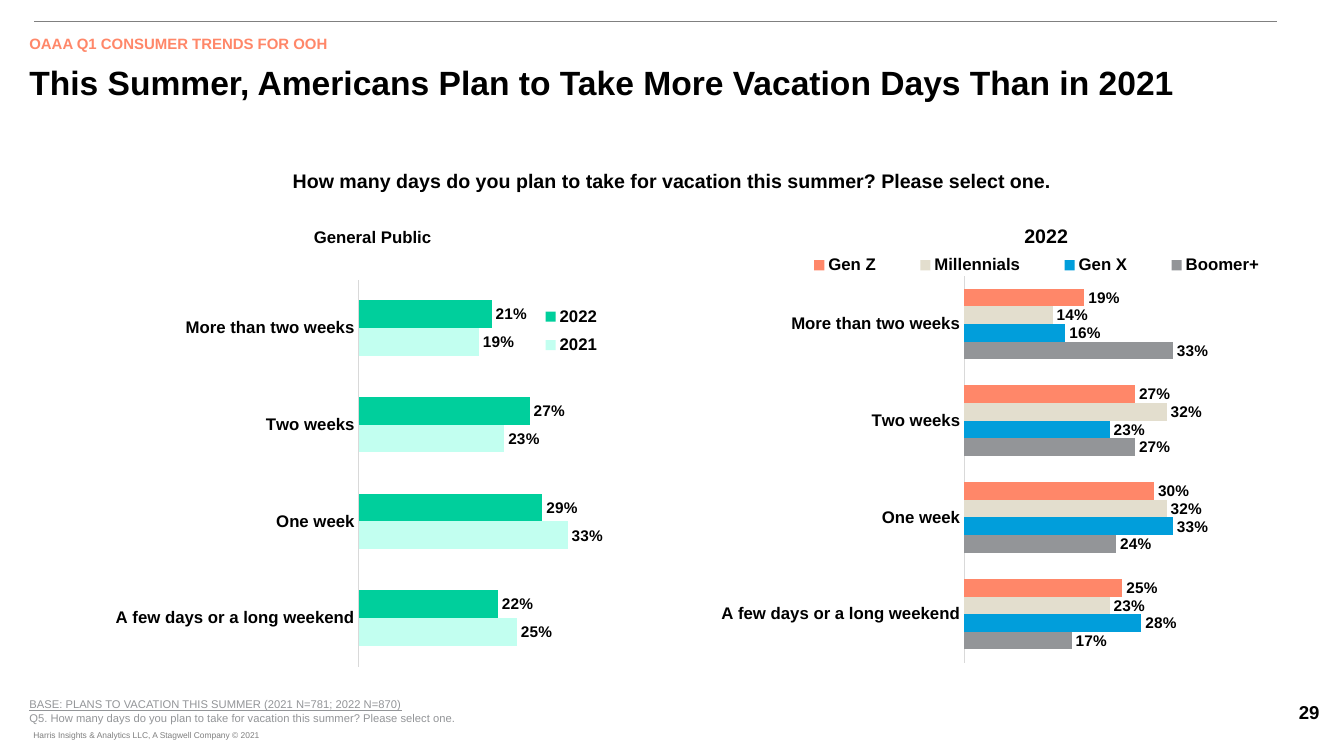
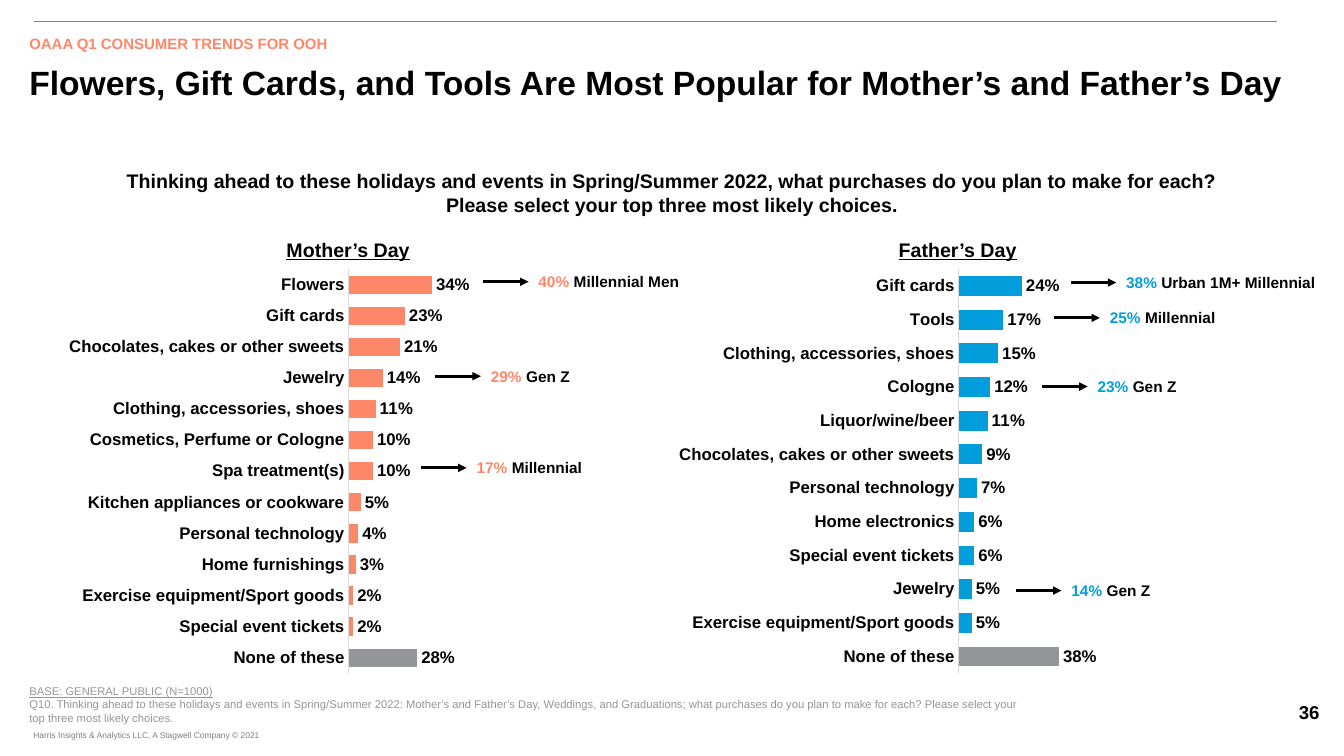
from lxml import etree
from pptx import Presentation
from pptx.chart.data import CategoryChartData
from pptx.dml.color import RGBColor
from pptx.enum.chart import XL_CHART_TYPE, XL_LABEL_POSITION, XL_LEGEND_POSITION, XL_TICK_MARK
from pptx.enum.shapes import MSO_CONNECTOR
from pptx.enum.text import PP_ALIGN
from pptx.oxml.ns import qn
from pptx.util import Cm, Pt

BAR = XL_CHART_TYPE.BAR_CLUSTERED
OUTSIDE_END = XL_LABEL_POSITION.OUTSIDE_END
LEGEND_RIGHT, LEGEND_TOP = XL_LEGEND_POSITION.RIGHT, XL_LEGEND_POSITION.TOP
NO_TICK = XL_TICK_MARK.NONE
STRAIGHT = MSO_CONNECTOR.STRAIGHT
LEFT, CENTER = PP_ALIGN.LEFT, PP_ALIGN.CENTER

FONT = "Arial"
BLACK = RGBColor(0x00, 0x00, 0x00)
CORAL = RGBColor(0xFF, 0x87, 0x69)
BLUE = RGBColor(0x01, 0x9E, 0xDB)
SAND = RGBColor(0xE3, 0xDE, 0xCE)
GREEN = RGBColor(0x00, 0xCF, 0x9C)
MINT = RGBColor(0xC2, 0xFF, 0xF0)
GRAY = RGBColor(0x93, 0x95, 0x98)
COPYRIGHT_GRAY = RGBColor(0x7F, 0x7F, 0x7F)
RULE_GRAY = RGBColor(0x80, 0x80, 0x80)
AXIS_GRAY = RGBColor(0xD9, 0xD9, 0xD9)

KICKER = {"size": Pt(10.7), "bold": True}
TITLE = {"size": Pt(24), "bold": True}
QUESTION = {"size": Pt(14), "bold": True}
SMALL_HEADING = {"size": Pt(12), "bold": True}
DAY_HEADING = {"size": Pt(14), "bold": True, "underline": True}
PAGE_NUMBER = {"size": Pt(13.3), "bold": True}
COPYRIGHT = {"size": Pt(6)}
NOTE = {"size": Pt(8)}
NOTE_BASE = {"size": Pt(8), "underline": True}
CALLOUT = {"size": Pt(11), "bold": True}

ARROW_LENGTH = 1.15
VACATION_LENGTHS = ["A few days or a long weekend", "One week", "Two weeks", "More than two weeks"]

MOTHER_GIFTS = {
    "Flowers": 0.34, "Gift cards": 0.23, "Chocolates, cakes or other sweets": 0.21,
    "Jewelry": 0.14, "Clothing, accessories, shoes": 0.11,
    "Cosmetics, Perfume or Cologne": 0.10, "Spa treatment(s)": 0.10,
    "Kitchen appliances or cookware": 0.05, "Personal technology": 0.04,
    "Home furnishings": 0.03, "Exercise equipment/Sport goods": 0.02,
    "Special event tickets": 0.02, "None of these": 0.28,
}
FATHER_GIFTS = {
    "Gift cards": 0.24, "Tools": 0.17, "Clothing, accessories, shoes": 0.15,
    "Cologne": 0.12, "Liquor/wine/beer": 0.11, "Chocolates, cakes or other sweets": 0.09,
    "Personal technology": 0.07, "Home electronics": 0.06, "Special event tickets": 0.06,
    "Jewelry": 0.05, "Exercise equipment/Sport goods": 0.05, "None of these": 0.38,
}


def style_font(font, formats, color=BLACK):
    for name, value in {"name": FONT, **formats}.items():
        setattr(font, name, value)
    font.color.rgb = color


def add_text(s, box, paragraphs, align=LEFT, wrap=True):
    """Each paragraph is a list of (text, formats, color) runs."""
    sp = s.shapes.add_textbox(*map(Cm, box))
    tf = sp.text_frame
    tf.word_wrap = wrap
    for i, runs in enumerate(paragraphs):
        p = tf.paragraphs[0] if i == 0 else tf.add_paragraph()
        p.alignment = align
        for text, formats, color in runs:
            r = p.add_run()
            r.text = text
            style_font(r.font, formats, color)
    return sp


def add_line(s, x1, x2, y, color, width, arrow=False):
    line = s.shapes.add_connector(STRAIGHT, *map(Cm, (x1, y, x2, y)))
    line.line.color.rgb = color
    line.line.width = Pt(width)
    if arrow:
        etree.SubElement(line.line._get_or_add_ln(), qn("a:tailEnd"), type="triangle")
    etree.SubElement(line._element.spPr, qn("a:effectLst"))


def add_frame(prs, title, question, number, note_top, note_base, note):
    """Add a slide with the heading, question and footer that all slides share."""
    s = prs.slides.add_slide(prs.slide_layouts[6])
    add_line(s, 0.86, 32.18, 0.55, RULE_GRAY, 0.5)
    add_text(s, (0.49, 0.74, 16.94, 0.71), [[("OAAA Q1 CONSUMER TRENDS FOR OOH", KICKER, CORAL)]])
    add_text(s, (0.49, 1.43, 33.27, 0.99), [[(title, TITLE, BLACK)]])
    add_text(s, (2.88, 4.14, 28.12, 1.45), [[(question, QUESTION, BLACK)]], CENTER)
    add_text(s, (0.49, note_top, 25.7, 0.9),
             [[(note_base, NOTE_BASE, GRAY)], [(note, NOTE, GRAY)]])
    owner = "Harris Insights & Analytics LLC, A Stagwell Company © 2021"
    sp = add_text(s, (0.84, 18.27, 6.07, 0.51), [[(owner, COPYRIGHT, COPYRIGHT_GRAY)]], wrap=False)
    sp.text_frame.margin_left = 0
    add_text(s, (32.13, 17.53, 1.73, 0.84), [[(number, PAGE_NUMBER, BLACK)]], CENTER)
    return s


def make_layout(x, y, w, h, inner=False):
    layout = etree.Element(qn("c:layout"))
    manual = etree.SubElement(layout, qn("c:manualLayout"))
    values = {"layoutTarget": "inner"} if inner else {}
    values.update(xMode="edge", yMode="edge", x=x, y=y, w=w, h=h)
    for tag, value in values.items():
        etree.SubElement(manual, qn(f"c:{tag}"), val=str(value))
    return layout


def add_bar_chart(s, box, categories, series, plot_box, axis_max, gap, label_size):
    """Series is a list of (name, values, color)."""
    data = CategoryChartData(number_format="0%")
    data.categories = categories
    for name, values, _ in series:
        data.add_series(name, values)
    chart = s.shapes.add_chart(BAR, *map(Cm, box), data).chart
    chart.has_title = False
    chart.has_legend = False
    style_font(chart.font, {"size": Pt(10), "bold": True})

    axis = chart.category_axis
    axis.major_tick_mark = axis.minor_tick_mark = NO_TICK
    axis.format.line.color.rgb = AXIS_GRAY
    axis.format.line.width = Pt(0.75)
    style_font(axis.tick_labels.font, {"size": Pt(12), "bold": True})
    scale = chart.value_axis
    scale.visible = False
    scale.has_major_gridlines = False
    scale.minimum_scale, scale.maximum_scale = 0, axis_max

    plot = chart.plots[0]
    plot.vary_by_categories = False
    plot.gap_width = gap
    plot.has_data_labels = True
    labels = plot.data_labels
    labels.show_value = True
    labels.position = OUTSIDE_END
    labels.number_format, labels.number_format_is_linked = "0%", False
    style_font(labels.font, {"size": Pt(label_size), "bold": True})
    for bars, (_, _, color) in zip(plot.series, series):
        bars.invert_if_negative = False
        bars.format.fill.solid()
        bars.format.fill.fore_color.rgb = color

    area = chart._chartSpace.chart.plotArea
    for old in area.findall(qn("c:layout")):
        area.remove(old)
    area.insert(0, make_layout(*plot_box, inner=True))
    return chart


def add_vacation_chart(s, box, series, plot_top, legend_position, legend_box):
    plot_box = (0.455, plot_top, 0.545, round(1 - plot_top, 3))
    chart = add_bar_chart(s, box, VACATION_LENGTHS, series, plot_box, 0.6, 148, 11)
    chart.has_legend = True
    legend = chart.legend
    legend.position = legend_position
    legend.include_in_layout = False
    style_font(legend.font, {"size": Pt(12), "bold": True})
    for old in legend._element.findall(qn("c:layout")):
        legend._element.remove(old)
    legend._element.find(qn("c:legendPos")).addnext(make_layout(*legend_box))


def add_gift_chart(s, left, width, gifts, color):
    series = [("Series 1", list(gifts.values()), color)]
    chart = add_bar_chart(s, (left, 6.77, width, 10.21), list(gifts), series,
                          (0.538, 0, 0.417, 1), 1.1, 70, 12)
    chart.category_axis.reverse_order = True
    plot = chart.plots[0]
    plot.overlap = -15
    none_fill = plot.series[0].points[len(gifts) - 1].format.fill
    none_fill.solid()
    none_fill.fore_color.rgb = GRAY


def add_callout(s, x, y, share, group, color):
    """Arrow from a bar to the group that chose the gift most often."""
    text_left = x + ARROW_LENGTH
    add_line(s, x, text_left, y, BLACK, 2, arrow=True)
    add_text(s, (text_left, y - 0.36, 5.51, 0.73),
             [[(f"{share} ", CALLOUT, color), (group, CALLOUT, BLACK)]])


def add_vacation_slide(prs):
    question = "How many days do you plan to take for vacation this summer? Please select one."
    s = add_frame(prs, "This Summer, Americans Plan to Take More Vacation Days Than in 2021",
                  question, "29", 17.45,
                  "BASE: PLANS TO VACATION THIS SUMMER (2021 N=781; 2022 N=870)", f"Q5. {question}")
    add_vacation_chart(s, (1.04, 7.03, 17.58, 9.78), [
        ("2021", (0.25, 0.33, 0.23, 0.19), MINT),
        ("2022", (0.22, 0.29, 0.27, 0.21), GREEN),
    ], 0, LEGEND_RIGHT, (0.71, 0.045, 0.1, 0.175))
    add_vacation_chart(s, (16.31, 5.79, 17.56, 10.92), [
        ("Boomer+", (0.17, 0.24, 0.27, 0.33), GRAY),
        ("Gen X", (0.28, 0.33, 0.23, 0.16), BLUE),
        ("Millennials", (0.23, 0.32, 0.32, 0.14), SAND),
        ("Gen Z", (0.25, 0.30, 0.27, 0.19), CORAL),
    ], 0.106, LEGEND_TOP, (0.184, 0.052, 0.75, 0.06))
    add_text(s, (6.71, 5.59, 5.36, 0.76), [[("General Public", SMALL_HEADING, BLACK)]], CENTER)
    add_text(s, (24.64, 5.51, 3.45, 0.86), [[("2022", QUESTION, BLACK)]], CENTER)


def add_gift_slide(prs):
    s = add_frame(prs, "Flowers, Gift Cards, and Tools Are Most Popular for Mother’s and Father’s Day",
                  "Thinking ahead to these holidays and events in Spring/Summer 2022, what purchases "
                  "do you plan to make for each? Please select your top three most likely choices.",
                  "36", 17.12, "BASE: GENERAL PUBLIC (N=1000)",
                  "Q10. Thinking ahead to these holidays and events in Spring/Summer 2022: Mother’s and "
                  "Father’s Day, Weddings, and Graduations; what purchases do you plan to make for each? "
                  "Please select your top three most likely choices.")
    days = [
        ("Mother’s Day", 5.93, 0, 16.33, MOTHER_GIFTS, CORAL, [
            (12.17, 7.1, "40%", "Millennial Men"),
            (10.97, 9.48, "29%", "Gen Z"),
            (10.61, 11.79, "17%", "Millennial"),
        ]),
        ("Father’s Day", 21.29, 14.7, 17.58, FATHER_GIFTS, BLUE, [
            (26.98, 7.12, "38%", "Urban 1M+ Millennial"),
            (26.57, 8.01, "25%", "Millennial"),
            (26.26, 9.74, "23%", "Gen Z"),
            (25.6, 14.88, "14%", "Gen Z"),
        ]),
    ]
    for day, heading_left, chart_left, chart_width, gifts, color, callouts in days:
        add_gift_chart(s, chart_left, chart_width, gifts, color)
        add_text(s, (heading_left, 5.87, 5.69, 0.86), [[(day, DAY_HEADING, BLACK)]], CENTER)
        for x, y, share, group in callouts:
            add_callout(s, x, y, share, group, color)


def main():
    prs = Presentation()
    prs.slide_width, prs.slide_height = Cm(33.87), Cm(19.05)
    add_vacation_slide(prs)
    add_gift_slide(prs)
    prs.save("out.pptx")


if __name__ == "__main__":
    main()
